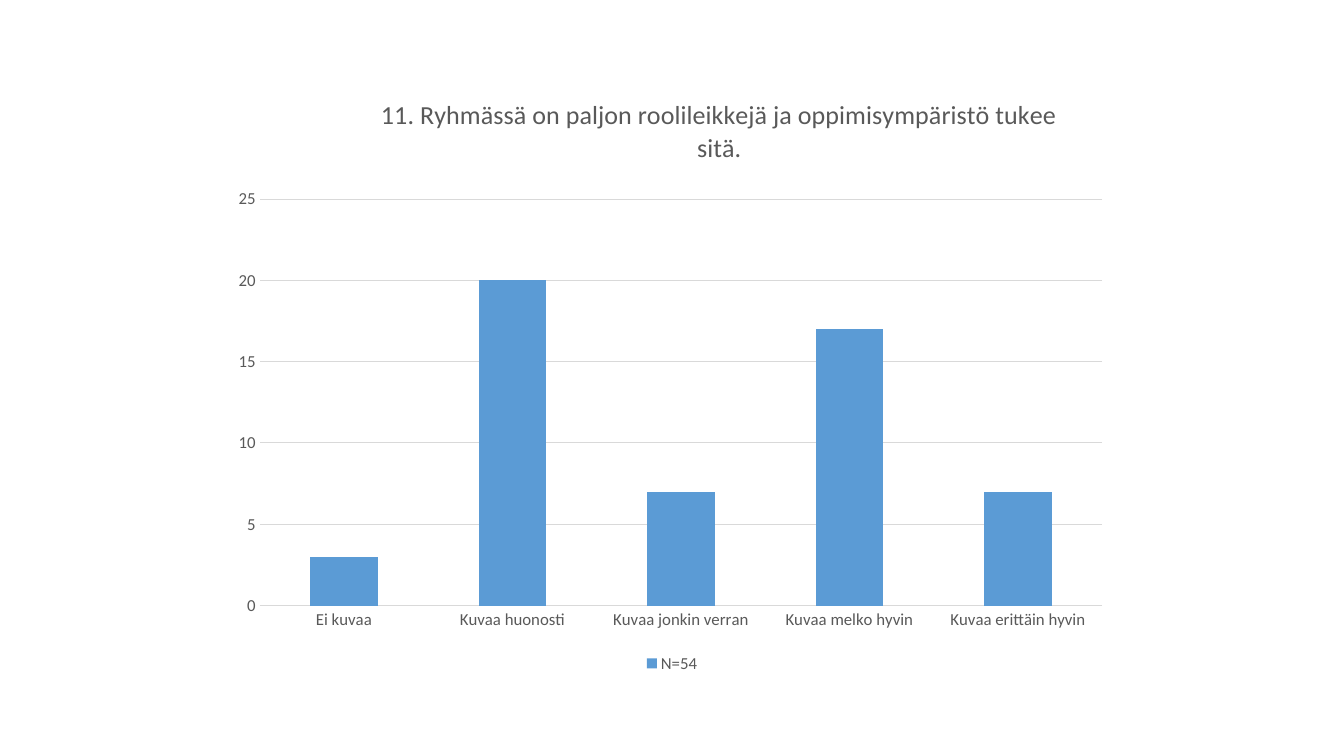
from lxml import etree
from pptx import Presentation
from pptx.chart.data import CategoryChartData
from pptx.dml.color import RGBColor
from pptx.enum import chart as ch
from pptx.oxml import ns
from pptx.util import Inches, Pt

GREY, GRID, BLUE = "595959", "D9D9D9", "5B9BD5"
TITLE = "11. Ryhmässä on paljon roolileikkejä ja oppimisympäristö tukee sitä."
ANSWERS = {
    "Ei kuvaa": 3,
    "Kuvaa huonosti": 20,
    "Kuvaa jonkin verran": 7,
    "Kuvaa melko hyvin": 17,
    "Kuvaa erittäin hyvin": 7,
}


def rgb(value):
    return RGBColor.from_string(value)


def style_font(font, size):
    font.name = "Calibri"
    font.size = Pt(size)
    font.bold = False
    font.color.rgb = rgb(GREY)


def style_line(line):
    line.color.rgb = rgb(GRID)
    line.width = Pt(0.75)


def set_layout(part, index, **settings):
    """Place a chart part by fractions of the chart's size."""
    layout = part.find(ns.qn("c:layout"))
    if layout is None:
        layout = etree.Element(ns.qn("c:layout"))
        part.insert(index, layout)
    manual = etree.SubElement(layout, ns.qn("c:manualLayout"))
    for tag, value in settings.items():
        etree.SubElement(manual, ns.qn(f"c:{tag}")).set("val", str(value))


def add_answer_chart(slide, left, top, width, height):
    data = CategoryChartData()
    data.categories = list(ANSWERS)
    data.add_series("N=54", list(ANSWERS.values()))
    chart = slide.shapes.add_chart(
        ch.XL_CHART_TYPE.COLUMN_STACKED, Inches(left), Inches(top),
        Inches(width), Inches(height), data).chart
    chart.font.name = "Calibri"
    chart.font.size = Pt(10)

    # Title
    chart.has_title = True
    p = chart.chart_title.text_frame.paragraphs[0]
    p.text = TITLE
    style_font(p.font, 18.6)
    chart_xml = chart._chartSpace.chart
    set_layout(chart_xml.find(ns.qn("c:title")), 1,
               xMode="edge", yMode="edge", x=0.17, y=0.02)

    # Columns
    plot = chart.plots[0]
    plot.gap_width = 150
    plot.overlap = 100
    plot.vary_by_categories = False
    fill = plot.series[0].format.fill
    fill.solid()
    fill.fore_color.rgb = rgb(BLUE)
    set_layout(chart_xml.plotArea, 0, layoutTarget="inner",
               xMode="edge", yMode="edge", x=0.04, y=0.2, w=0.94, h=0.68)

    # Axes
    for axis in (chart.category_axis, chart.value_axis):
        axis.major_tick_mark = axis.minor_tick_mark = ch.XL_TICK_MARK.NONE
        style_font(axis.tick_labels.font, 12)
    style_line(chart.category_axis.format.line)
    values = chart.value_axis
    values.minimum_scale, values.maximum_scale, values.major_unit = 0, 25, 5
    values.format.line.fill.background()
    style_line(values.major_gridlines.format.line)

    # Legend
    chart.has_legend = True
    chart.legend.position = ch.XL_LEGEND_POSITION.BOTTOM
    chart.legend.include_in_layout = False
    style_font(chart.legend.font, 12)


def main():
    prs = Presentation()
    prs.slide_width, prs.slide_height = Inches(13.33), Inches(7.5)
    slide = prs.slides.add_slide(prs.slide_layouts[6])
    add_answer_chart(slide, 2.22, 0.79, 8.89, 5.93)
    prs.save("out.pptx")


if __name__ == "__main__":
    main()
